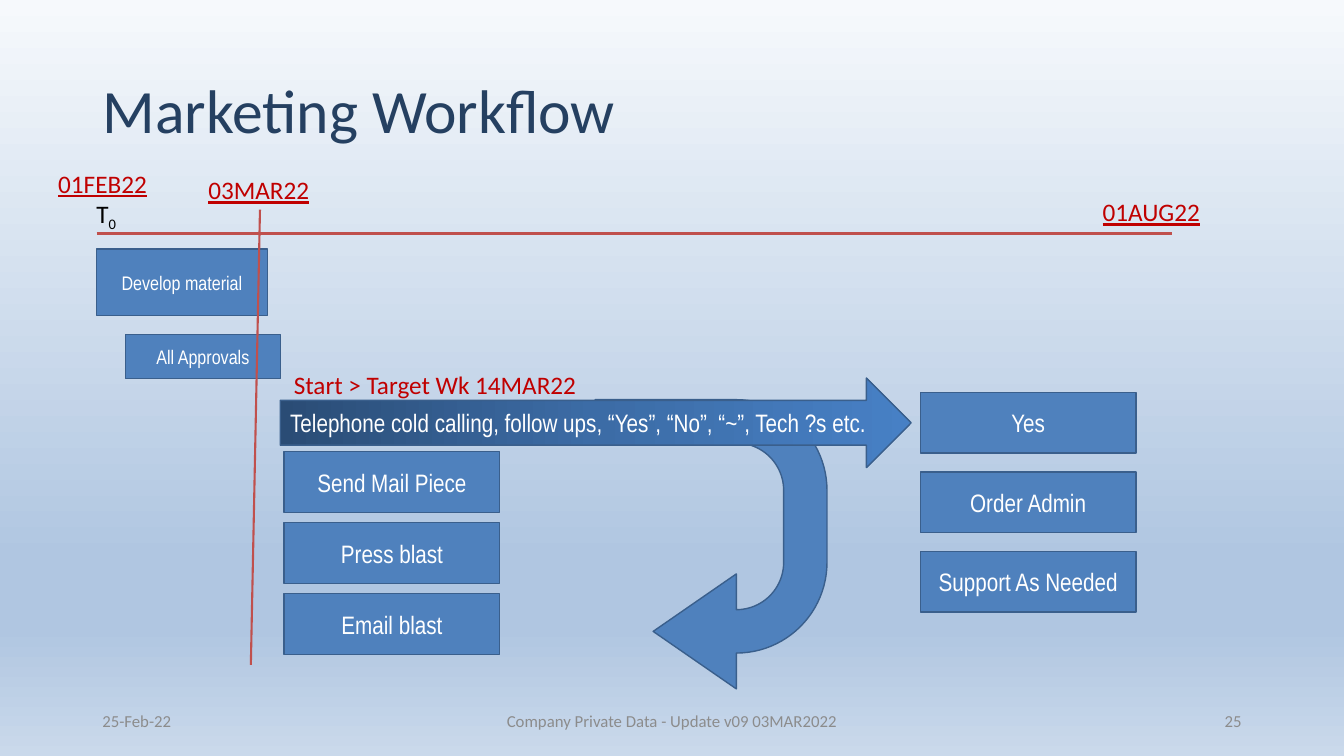
from lxml import etree
from pptx import Presentation
from pptx.dml.color import RGBColor
from pptx.enum import shapes, text
from pptx.oxml import ns
from pptx.util import Pt

COLOURS = {
    "title": "254061", "box": "4F81BD", "outline": "3A5F8C", "white": "FFFFFF",
    "black": "000000", "date": "C00000", "rule": "C0504D", "footer": "8C8C8C",
}
BACKGROUND_STOPS = [(0, "F6F9FC"), (74, "B0C6E1"), (83, "B0C6E1"), (100, "CAD9EB")]
CALLING_STOPS = [(0, "2A4C75"), (50, "3C6CA6"), (100, "4780C5")]
LEFT, CENTER, RIGHT = text.PP_ALIGN.LEFT, text.PP_ALIGN.CENTER, text.PP_ALIGN.RIGHT


def colour(name):
    return RGBColor.from_string(COLOURS[name])


def set_gradient(fill, parent, stops, angle):
    """Fill parent with a linear gradient; stops are (percent, hex) pairs."""
    fill.solid()
    solid = parent.find(ns.qn("a:solidFill"))
    gradient = etree.Element(ns.qn("a:gradFill"), rotWithShape="1")
    stop_list = etree.SubElement(gradient, ns.qn("a:gsLst"))
    for percent, value in stops:
        stop = etree.SubElement(stop_list, ns.qn("a:gs"), pos=str(percent * 1000))
        etree.SubElement(stop, ns.qn("a:srgbClr"), val=value)
    etree.SubElement(gradient, ns.qn("a:lin"), ang=str(angle * 60000), scaled="0")
    parent.replace(solid, gradient)


def write(shape, words, size, font, colour_name, align, anchor=text.MSO_ANCHOR.MIDDLE):
    frame = shape.text_frame
    frame.text = words
    frame.word_wrap = True
    frame.vertical_anchor = anchor
    paragraph = frame.paragraphs[0]
    paragraph.alignment = align
    run = paragraph.runs[0]
    run.font.size = Pt(size)
    run.font.name = font
    run.font.color.rgb = colour(colour_name)
    return run


def add_block(slide, kind, box, words="", size=18, align=CENTER):
    shape = slide.shapes.add_shape(kind, *map(Pt, box))
    shape.shadow.inherit = False
    shape.fill.solid()
    shape.fill.fore_color.rgb = colour("box")
    shape.line.color.rgb = colour("outline")
    shape.line.width = Pt(1)
    if words:
        write(shape, words, size, "Arial Narrow", "white", align)
    return shape


def add_label(slide, box, words, colour_name="date", underline=False, align=LEFT):
    label = slide.shapes.add_textbox(*map(Pt, box))
    run = write(label, words, 18, "Calibri", colour_name, align, text.MSO_ANCHOR.TOP)
    run.font.underline = underline
    label.text_frame.word_wrap = False
    label.text_frame.auto_size = text.MSO_AUTO_SIZE.SHAPE_TO_FIT_TEXT
    return label


def add_rule(slide, ends, width):
    rule = slide.shapes.add_connector(shapes.MSO_CONNECTOR.STRAIGHT, *map(Pt, ends))
    rule.line.color.rgb = colour("rule")
    rule.line.width = Pt(width)
    etree.SubElement(rule._element.spPr, ns.qn("a:effectLst"))


def add_title(slide, box, words):
    title = slide.shapes.title
    title.left, title.top, title.width, title.height = map(Pt, box)
    write(title, words, 44, "Calibri", "title", LEFT)
    title.text_frame.auto_size = text.MSO_AUTO_SIZE.NONE
    title.text_frame.paragraphs[0].line_spacing = 0.9


def add_footer(slide, box):
    left, top, width, height = box
    for words, offset, part_width, align in [
        ("25-Feb-22", 0, 216, LEFT),
        ("Company Private Data - Update v09 03MAR2022", 252, 324, CENTER),
        ("25", width - 216, 216, RIGHT),
    ]:
        part = slide.shapes.add_textbox(*map(Pt, (left + offset, top, part_width, height)))
        write(part, words, 12, "Calibri", "footer", align)


def add_column(slide, box, pitch, names):
    """Stack equal boxes downwards; box is the first of them."""
    left, top, width, height = box
    for row, name in enumerate(names):
        add_block(slide, shapes.MSO_SHAPE.RECTANGLE,
                  (left, top + row * pitch, width, height), name)


def add_preparation(slide, left, top):
    for name, x, y, width, height in [
        ("Develop material", 0, 0, 122, 47.5),
        ("All Approvals", 20.5, 61, 111, 31.5),
    ]:
        add_block(slide, shapes.MSO_SHAPE.RECTANGLE,
                  (left + x, top + y, width, height), name, 14)


def add_calling(slide, box):
    left, top, width, height = box
    arrow = add_block(
        slide, shapes.MSO_SHAPE.RIGHT_ARROW, box,
        "Telephone cold calling, follow ups, “Yes”, “No”, “~”, Tech ?s etc.", align=LEFT)
    set_gradient(arrow.fill, arrow._element.spPr, CALLING_STOPS, 0)
    add_label(slide, (left + 1.5, top - 9.5, 218, 29), "Start > Target Wk 14MAR22",
              align=CENTER)


def add_return_arrow(slide, box):
    arrow = add_block(slide, shapes.MSO_SHAPE.U_TURN_ARROW, box)
    arrow.rotation = 90
    for index, value in enumerate([0.187, 0.248, 0.359, 0.438, 0.75]):
        arrow.adjustments[index] = value


def add_timeline(slide, left, top, width):
    add_rule(slide, (left, top, left + width, top), 2.25)
    add_rule(slide, (left + 116.7, top - 17.3, left + 110.2, top + 308), 1.5)
    start = add_label(slide, (left - 7.2, top - 29, 32, 29), "T", "black")
    subscript = start.text_frame.paragraphs[0].add_run()
    subscript.text = "0"
    subscript.font.size = Pt(18)
    subscript.font.name = "Calibri"
    subscript.font.color.rgb = colour("black")
    subscript.font._element.set("baseline", "-25000")
    for date, x, y, label_width in [
        ("01FEB22", -34.5, -50.5, 78.5),
        ("03MAR22", 72.7, -46, 87),
        ("01AUG22", 711.5, -30.2, 85),
    ]:
        add_label(slide, (left + x, top + y, label_width, 29), date, underline=True)


def build_workflow(presentation):
    slide = presentation.slides.add_slide(presentation.slide_layouts[5])
    background = slide.background.fill
    background.solid()
    properties = slide._element.cSld.find(ns.qn("p:bg")).find(ns.qn("p:bgPr"))
    set_gradient(background, properties, BACKGROUND_STOPS, 90)
    add_title(slide, (66, 29, 828, 104), "Marketing Workflow")
    add_return_arrow(slide, (404.6, 306, 206.6, 165.6))
    add_column(slide, (203, 322.6, 154, 43.4), 50.75,
               ["Send Mail Piece", "Press blast", "Email blast"])
    add_preparation(slide, 69, 178)
    add_calling(slide, (200.2, 270, 450.7, 64))
    add_column(slide, (657.4, 280.2, 154, 43.4), 56.8,
               ["Yes", "Order Admin", "Support As Needed"])
    add_timeline(slide, 69, 167, 768)
    add_footer(slide, (66, 500.5, 828, 28.8))


def main():
    presentation = Presentation()
    presentation.slide_width, presentation.slide_height = Pt(960), Pt(540)
    build_workflow(presentation)
    presentation.save("out.pptx")


if __name__ == "__main__":
    main()
